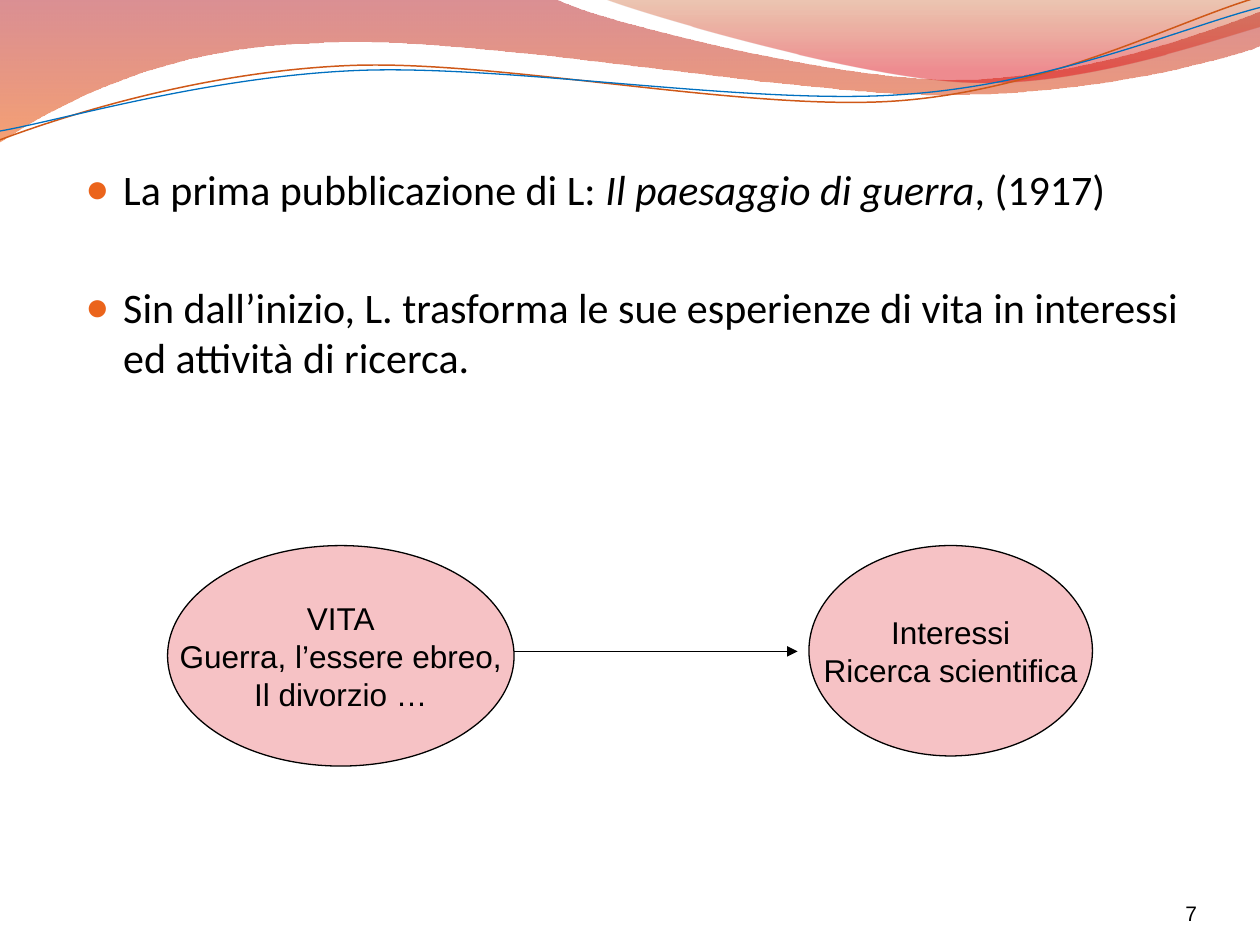
"""Build the slide on how life experiences become research interests."""
from math import cos, radians, sin
from lxml.etree import SubElement
from pptx import Presentation
from pptx.dml.color import RGBColor
from pptx.enum.shapes import MSO_CONNECTOR, MSO_SHAPE
from pptx.enum.text import MSO_ANCHOR, PP_ALIGN
from pptx.oxml.ns import qn
from pptx.util import Inches, Pt

BLACK = RGBColor(0x00, 0x00, 0x00)
PINK = RGBColor(0xEC, 0x76, 0x7C)
BULLET = RGBColor(0xEB, 0x64, 0x1B)
CRIMSON = RGBColor(0xAF, 0x09, 0x11)
ORANGE = RGBColor(0xEE, 0x53, 0x00)
RUST = RGBColor(0xC2, 0x44, 0x00)
RED = RGBColor(0xDC, 0x00, 0x0B)
COPPER = RGBColor(0xCF, 0x58, 0x18)
BLUE = RGBColor(0x00, 0x70, 0xC0)
TILT = 2.7


def add_curve(parent, start, segments, closed, tilt=0, center=(0, 0)):
    points = [start]
    for segment in segments:
        points.extend(zip(segment[::2], segment[1::2]))
    turn, (cx, cy) = radians(tilt), center
    corners = [(Inches(cx + (x - cx) * cos(turn) - (y - cy) * sin(turn)),
                Inches(cy + (x - cx) * sin(turn) + (y - cy) * cos(turn))) for x, y in points]
    builder = parent.build_freeform(*corners[0])
    builder.add_line_segments(corners[1:], close=closed)
    curve = builder.convert_to_shape()
    curve.shadow.inherit = False
    curve.rotation = -tilt % 360
    outline = next(curve._element.iter(qn("a:path")))
    lines = iter(outline.findall(qn("a:lnTo")))
    for segment in segments:
        bend = next(lines)
        if len(segment) == 6:
            bend.tag = qn("a:cubicBezTo")
            for line in (next(lines), next(lines)):
                bend.append(line[0])
                outline.remove(line)
    return curve


def set_opacity(fill, percents):
    colors = fill._xPr.iter(qn("a:srgbClr"))
    for color, percent in zip(colors, percents):
        SubElement(color, qn("a:alpha"), val=str(percent * 1000))


prs = Presentation()
prs.slide_width = Inches(10)
prs.slide_height = Inches(7.5)
slide = prs.slides.add_slide(prs.slide_layouts[6])
shapes = slide.shapes

waves = [
    ((0, 0),
     [(4.4, -0.01), (4.76, 0.17, 6.64, 0.63, 7.58, 0.63), (8.53, 0.63, 9.58, 0.26, 10, 0.09),
      (10.01, 0.36), (9.83, 0.44, 8.7, 0.76, 7.46, 0.75), (6.22, 0.75, 3.82, 0.28, 2.57, 0.34),
      (1.29, 0.36, 0.46, 0.83, -0.01, 1.13), (0, 0)],
     [(0, CRIMSON, 45), (1, ORANGE, 55)]),
    ((4.79, -0.01),
     [(5.09, 0.11, 6.82, 0.62, 7.69, 0.65), (8.56, 0.69, 9.61, 0.32, 10, 0.21), (10, 0),
      (4.79, -0.01)],
     [(0, RUST, 30), (0.8, RED, 45)]),
]
for start, segments, stops in waves:
    wave = add_curve(shapes, start, segments, True)
    wave.line.fill.background()
    wave.fill.gradient()
    wave.fill.gradient_angle = 270
    for stop, (position, color, _) in zip(wave.fill.gradient_stops, stops):
        stop.position = position
        stop.color.rgb = color
    set_opacity(wave.fill, [opacity for _, _, opacity in stops])

strands = [
    ((0, 1.11),
     [(0.48, 0.93, 1.58, 0.57, 2.77, 0.52), (3.95, 0.47, 5.93, 0.89, 7.13, 0.8),
      (8.33, 0.71, 9.38, 0.15, 9.98, -0.02)], (4.99, 0.57), COPPER, 0.85),
    ((0, 1.04),
     [(0.47, 0.96, 1.64, 0.61, 2.83, 0.56), (4.03, 0.51, 5.97, 0.84, 7.17, 0.75),
      (8.36, 0.67, 9.41, 0.21, 10, 0.06)], (5, 0.59), BLUE, 0.75),
]
braid = shapes.add_group_shape().shapes
for start, segments, center, color, width in strands:
    strand = add_curve(braid, start, segments, False, TILT, center)
    strand.fill.background()
    strand.line.color.rgb = color
    strand.line.width = Pt(width)

body = shapes.add_textbox(Inches(0.58), Inches(1.25), Inches(9), Inches(4.62)).text_frame
body.word_wrap = True
statements = [
    [("La prima pubblicazione di L: ", False), ("Il paesaggio di guerra", True), (", (1917)", False)],
    [("Sin dall’inizio, L. trasforma le sue esperienze di vita in interessi "
      "ed attività di ricerca.", False)],
]
for index, statement in enumerate(statements):
    paragraph = body.add_paragraph() if index else body.paragraphs[0]
    paragraph.space_before = Pt(38.4 * index)
    for words, italic in statement:
        run = paragraph.add_run()
        run.text = words
        run.font.name = "Calibri"
        run.font.size = Pt(24)
        run.font.italic = italic
        run.font.color.rgb = BLACK
    properties = paragraph._p.get_or_add_pPr()
    properties.set("marL", str(Inches(0.3)))
    properties.set("indent", str(-Inches(0.3)))
    SubElement(SubElement(properties, qn("a:buClr")), qn("a:srgbClr"), val=str(BULLET))
    SubElement(properties, qn("a:buSzPct"), val="95000")
    SubElement(properties, qn("a:buFont"), typeface="Arial")
    SubElement(properties, qn("a:buChar"), char="●")

page = shapes.add_textbox(Inches(8.67), Inches(6.95), Inches(0.83), Inches(0.4)).text_frame
page.margin_left = page.margin_right = page.margin_top = page.margin_bottom = 0
page.word_wrap = True
page.vertical_anchor = MSO_ANCHOR.BOTTOM
page.text = "7"
page.paragraphs[0].alignment = PP_ALIGN.RIGHT
number = page.paragraphs[0].runs[0].font
number.size = Pt(12)
number.name = "Arial"
number.color.rgb = BLACK

themes = [
    (1.33, 2.75, 1.75, "VITA\nGuerra, l’essere ebreo,\nIl divorzio …"),
    (6.42, 2.25, 1.67, "Interessi\nRicerca scientifica"),
]
for left, width, height, words in themes:
    theme = shapes.add_shape(MSO_SHAPE.OVAL, Inches(left), Inches(4.33), Inches(width), Inches(height))
    theme.shadow.inherit = False
    theme.fill.solid()
    theme.fill.fore_color.rgb = PINK
    set_opacity(theme.fill, [44])
    theme.line.color.rgb = BLACK
    theme.line.width = Pt(0.75)
    theme.text_frame.word_wrap = False
    theme.text_frame.vertical_anchor = MSO_ANCHOR.MIDDLE
    theme.text_frame.text = words
    for paragraph in theme.text_frame.paragraphs:
        paragraph.alignment = PP_ALIGN.CENTER
        for run in paragraph.runs:
            run.font.name = "Arial"
            run.font.size = Pt(18)
            run.font.color.rgb = BLACK

influence = shapes.add_connector(MSO_CONNECTOR.STRAIGHT, Inches(4.08), Inches(5.17), Inches(6.33), Inches(5.17))
influence.line.color.rgb = BLACK
influence.line.width = Pt(0.75)
SubElement(influence.line._get_or_add_ln(), qn("a:tailEnd"), type="triangle")
SubElement(influence._element.spPr, qn("a:effectLst"))

prs.save("out.pptx")
